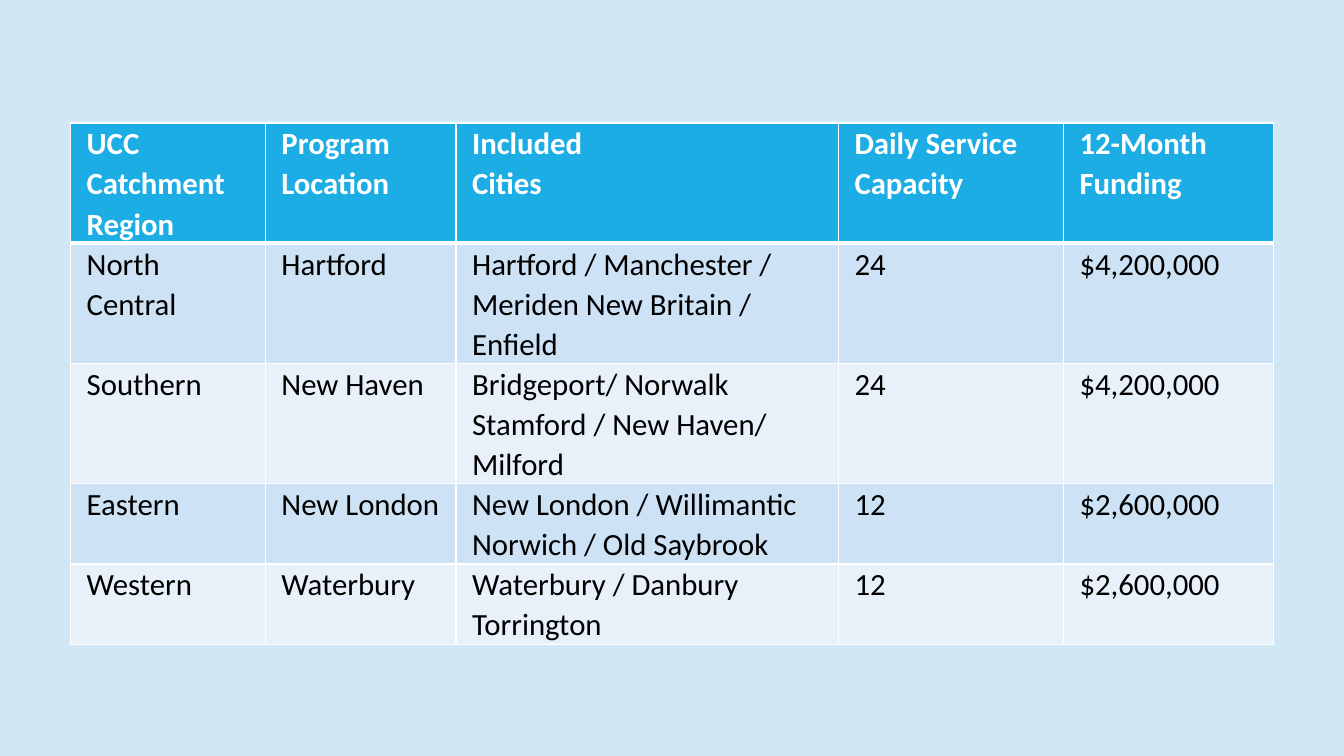
from lxml import etree
from pptx import Presentation
from pptx.dml.color import RGBColor
from pptx.oxml.ns import qn
from pptx.util import Inches, Pt

COLORS = {
    "background": "D1E7F6",
    "header": "1CADE4",
    "odd_row": "CDE3F5",
    "even_row": "E8F1FA",
    "border": "FFFFFF",
    "header_text": "FFFFFF",
    "body_text": "000000",
}
FONT = "Calibri"
SLIDE_WIDTH, SLIDE_HEIGHT = 13.33, 7.5
TABLE_BOX = (0.7, 1.22, 11.93, 5.06)
COLUMN_SHARES = (1.93, 1.89, 3.79, 2.23, 2.08)
ROW_SHARES = (3, 3, 3, 2, 2)
THIN, THICK = 1, 3

FUNDING_ROWS = [
    ("UCC Catchment Region", "Program Location", "Included\nCities",
     "Daily Service Capacity", "12-Month Funding"),
    ("North Central", "Hartford",
     "Hartford / Manchester / Meriden New Britain / Enfield", "24", "$4,200,000"),
    ("Southern", "New Haven",
     "Bridgeport/ Norwalk Stamford / New Haven/ Milford", "24", "$4,200,000"),
    ("Eastern", "New London",
     "New London / Willimantic Norwich / Old Saybrook", "12", "$2,600,000"),
    ("Western", "Waterbury", "Waterbury / Danbury Torrington", "12", "$2,600,000"),
]


def rgb(name):
    return RGBColor.from_string(COLORS[name])


def set_borders(cell, row_index):
    widths = {
        "a:lnL": THIN,
        "a:lnR": THIN,
        "a:lnT": THICK if row_index == 1 else THIN,
        "a:lnB": THICK if row_index == 0 else THIN,
    }
    properties = cell._tc.get_or_add_tcPr()
    for position, (side, width) in enumerate(widths.items()):
        line = etree.Element(qn(side), w=str(Pt(width)))
        fill = etree.SubElement(line, qn("a:solidFill"))
        etree.SubElement(fill, qn("a:srgbClr"), val=COLORS["border"])
        properties.insert(position, line)


def style_cell(cell, text, row_index):
    is_header = row_index == 0
    fill_name = "header" if is_header else "odd_row" if row_index % 2 else "even_row"
    cell.margin_left = cell.margin_right = Inches(0.16)
    cell.margin_top = cell.margin_bottom = 0
    cell.fill.solid()
    cell.fill.fore_color.rgb = rgb(fill_name)
    set_borders(cell, row_index)
    cell.text_frame.text = text
    for para in cell.text_frame.paragraphs:
        para.line_spacing = 1.07
        para.font.name = FONT
        para.font.size = Pt(22)
        para.font.bold = is_header
        para.font.color.rgb = rgb("header_text" if is_header else "body_text")


def add_funding_table(page, box):
    left, top, width, height = box
    frame = page.shapes.add_table(
        len(FUNDING_ROWS), len(COLUMN_SHARES),
        Inches(left), Inches(top), Inches(width), Inches(height))
    table = frame.table
    for column, share in zip(table.columns, COLUMN_SHARES):
        column.width = Inches(width * share / sum(COLUMN_SHARES))
    for row, share in zip(table.rows, ROW_SHARES):
        row.height = Inches(height * share / sum(ROW_SHARES))
    for row_index, texts in enumerate(FUNDING_ROWS):
        for column_index, text in enumerate(texts):
            style_cell(table.cell(row_index, column_index), text, row_index)


def main():
    deck = Presentation()
    deck.slide_width = Inches(SLIDE_WIDTH)
    deck.slide_height = Inches(SLIDE_HEIGHT)
    page = deck.slides.add_slide(deck.slide_layouts[6])
    page.background.fill.solid()
    page.background.fill.fore_color.rgb = rgb("background")
    add_funding_table(page, TABLE_BOX)
    deck.save("out.pptx")


if __name__ == "__main__":
    main()
